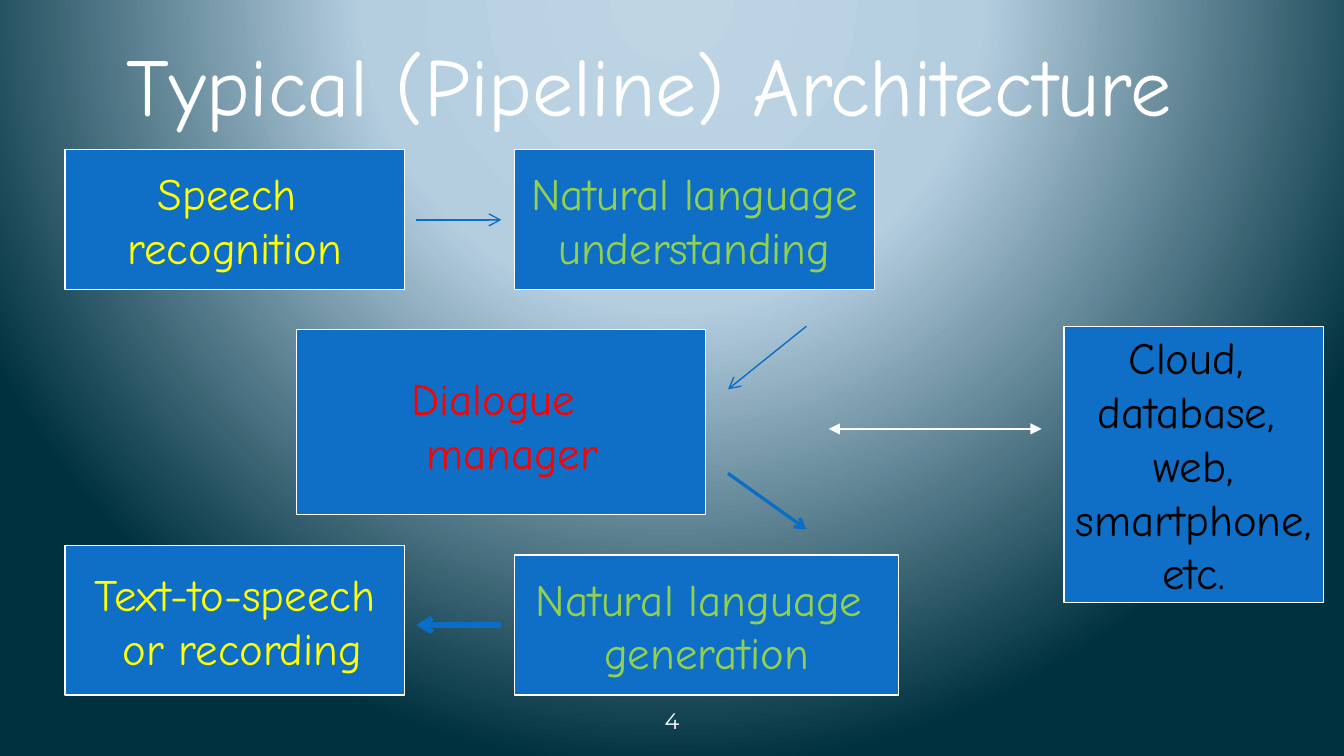
from pptx import Presentation
from pptx.dml.color import RGBColor
from pptx.enum import shapes, text
from pptx.oxml import parse_xml
from pptx.oxml.ns import nsdecls
from pptx.util import Pt

WHITE = RGBColor(0xFF, 0xFF, 0xFF)
BLACK = RGBColor(0, 0, 0)
RED = RGBColor(0xFF, 0, 0)
YELLOW = RGBColor(0xFF, 0xFF, 0)
GREEN = RGBColor(0x92, 0xD0, 0x50)
BOX_BLUE = RGBColor(0x0F, 0x6F, 0xC6)
ARROW_BLUE = RGBColor(0x0A, 0x6D, 0xC6)
GRADIENT = [(0, RGBColor(0xBF, 0xD5, 0xE4)),
            (40, RGBColor(0xB4, 0xCE, 0xE0)),
            (100, RGBColor(0, 0x31, 0x3F))]


def write(frame, lines, size, color, align=text.PP_ALIGN.CENTER,
          anchor=text.MSO_ANCHOR.MIDDLE, wrap=False, font="Comic Neue"):
    frame.word_wrap = wrap
    frame.vertical_anchor = anchor
    frame.text = "\n".join(lines)
    for line in frame.paragraphs:
        line.alignment = align
        for key, value in {"size": Pt(size), "name": font}.items():
            setattr(line.runs[0].font, key, value)
        line.runs[0].font.color.rgb = color


def arrow(x1, y1, x2, y2, color, width, ends):
    link = slide.shapes.add_connector(
        shapes.MSO_CONNECTOR.STRAIGHT, Pt(x1), Pt(y1), Pt(x2), Pt(y2))
    link.line.color.rgb = color
    link.line.width = Pt(width)
    outline = link.line._get_or_add_ln()
    for end, kind in ends.items():
        outline.append(parse_xml(f'<a:{end} {nsdecls("a")} type="{kind}"/>'))
    outline.addnext(parse_xml(f'<a:effectLst {nsdecls("a")}/>'))


deck = Presentation()
deck.slide_width, deck.slide_height = Pt(720), Pt(405)
slide = deck.slides.add_slide(deck.slide_layouts[5])

# Background: circular gradient centred above the slide
slide.background.fill.gradient()
linear = slide.element.xpath(".//p:bgPr/a:gradFill")[0]
stops = "".join(f'<a:gs pos="{pos * 1000}"><a:srgbClr val="{color}"/></a:gs>'
                for pos, color in GRADIENT)
linear.getparent().replace(linear, parse_xml(
    f'<a:gradFill {nsdecls("a")} rotWithShape="1"><a:gsLst>{stops}</a:gsLst>'
    '<a:path path="circle"><a:fillToRect l="50000" t="-80000" r="50000" b="180000"/>'
    '</a:path></a:gradFill>'))

# Title
title = slide.shapes.title
for side, value in {"left": 12.25, "top": 10.8, "width": 671.75, "height": 67.7}.items():
    setattr(title, side, Pt(value))
write(title.text_frame, ["Typical (Pipeline) Architecture"], 44, WHITE, wrap=True)
title.text_frame.auto_size = text.MSO_AUTO_SIZE.NONE

# Slide number
number = slide.shapes.add_textbox(Pt(246), Pt(375), Pt(228), Pt(21.6))
write(number.text_frame, ["4"], 12, WHITE, wrap=True, font="Montserrat")

# Pipeline stages: left, top, width, height, lines, text colour
stages = [
    (159, 176.6, 219, 99.2, [], RED),
    (34.8, 80, 182, 75, ["Speech ", "recognition"], YELLOW),
    (34.8, 292.4, 182, 80, ["Text-to-speech", " or recording"], YELLOW),
    (570, 174.8, 139, 148, ["Cloud, ", "database, ", "web,", "smartphone,", "etc."], BLACK),
    (275.5, 80, 193, 75, ["Natural language", "understanding"], GREEN),
    (275.5, 297.4, 206, 75, ["Natural language ", "generation"], GREEN),
]
for left, top, width, height, lines, color in stages:
    stage = slide.shapes.add_shape(shapes.MSO_SHAPE.RECTANGLE,
                                   Pt(left), Pt(top), Pt(width), Pt(height))
    stage.shadow.inherit = False
    stage.fill.solid()
    stage.fill.fore_color.rgb = BOX_BLUE
    stage.line.color.rgb = WHITE
    stage.line.width = Pt(0.75)
    if lines:
        write(stage.text_frame, lines, 24, color)

# Dialogue manager label, set left inside its box
manager = slide.shapes.add_textbox(Pt(213.2), Pt(195.2), Pt(116), Pt(65.4))
write(manager.text_frame, ["Dialogue", " manager"], 24, RED,
      text.PP_ALIGN.LEFT, text.MSO_ANCHOR.TOP)
manager.text_frame.auto_size = text.MSO_AUTO_SIZE.SHAPE_TO_FIT_TEXT

# Flow between the stages
for x1, y1, x2, y2, width in [(223, 117.8, 268.6, 117.8, 0.75),
                              (432, 174.8, 390, 208.6, 0.75),
                              (390, 253.6, 432, 283.6, 1.75),
                              (268.6, 334.8, 223, 334.8, 2.75)]:
    arrow(x1, y1, x2, y2, ARROW_BLUE, width, {"tailEnd": "arrow"})

# Exchange with the outside services
arrow(444, 229.8, 558, 229.8, WHITE, 0.75, {"headEnd": "triangle", "tailEnd": "triangle"})

deck.save("out.pptx")
